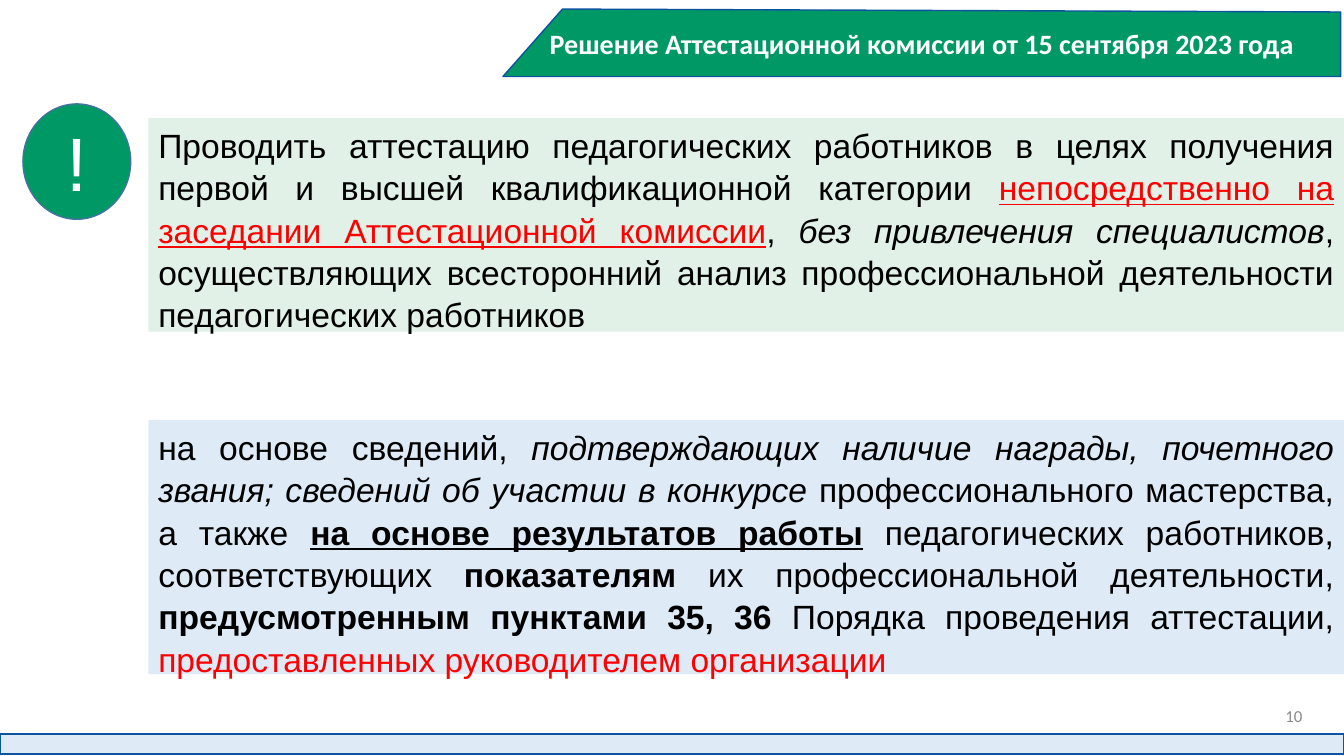
from dataclasses import dataclass

from pptx import Presentation
from pptx.dml.color import RGBColor
from pptx.enum.shapes import MSO_SHAPE
from pptx.enum.text import MSO_ANCHOR, MSO_AUTO_SIZE, PP_ALIGN
from pptx.shapes.autoshape import Shape
from pptx.slide import Slide
from pptx.text.text import TextFrame
from pptx.util import Pt

RECT, OVAL, BAR = MSO_SHAPE.RECTANGLE, MSO_SHAPE.OVAL, MSO_SHAPE.FLOWCHART_PROCESS
MIDDLE, TOP = MSO_ANCHOR.MIDDLE, MSO_ANCHOR.TOP
FIXED, GROW = MSO_AUTO_SIZE.NONE, MSO_AUTO_SIZE.SHAPE_TO_FIT_TEXT
CENTER, RIGHT, JUSTIFY = PP_ALIGN.CENTER, PP_ALIGN.RIGHT, PP_ALIGN.JUSTIFY

GREEN = RGBColor(0x00, 0x99, 0x65)
NAVY = RGBColor(0x0C, 0x54, 0x9E)
STEEL = RGBColor(0x43, 0x73, 0x9E)
MINT = RGBColor(0xE1, 0xF1, 0xE8)
PALE = RGBColor(0xDE, 0xEB, 0xF7)
GRAY = RGBColor(0x89, 0x89, 0x89)
RED = RGBColor(0xFF, 0x00, 0x00)
BLACK = RGBColor(0x00, 0x00, 0x00)
WHITE = RGBColor(0xFF, 0xFF, 0xFF)

WIDE, HIGH = 960, 540
LEFT = 106


@dataclass(frozen=True)
class Span:
    text: str
    color: RGBColor = BLACK
    bold: bool = False
    slant: bool = False
    under: bool = False


@dataclass(frozen=True)
class Panel:
    top: float
    height: float
    fill: RGBColor
    spans: tuple[Span, ...]


PANELS = (
    Panel(84.3, 152.6, MINT, (
        Span("Проводить аттестацию педагогических работников в целях получения "
             "первой и высшей квалификационной категории "),
        Span("непосредственно на заседании Аттестационной комиссии", RED, under=True),
        Span(", "),
        Span("без привлечения специалистов", slant=True),
        Span(", осуществляющих всесторонний анализ профессиональной деятельности "
             "педагогических работников"),
    )),
    Panel(300, 181.6, PALE, (
        Span("на основе сведений, "),
        Span("подтверждающих наличие награды, почетного звания; "
             "сведений об участии в конкурсе ", slant=True),
        Span("профессионального мастерства, а также "),
        Span("на основе результатов работы", bold=True, under=True),
        Span(" педагогических работников, соответствующих "),
        Span("показателям", bold=True),
        Span(" их профессиональной деятельности, "),
        Span("предусмотренным пунктами 35, 36 ", bold=True),
        Span("Порядка проведения аттестации, "),
        Span("предоставленных руководителем организации", RED),
    )),
)


def paint(shape: Shape, fill: RGBColor, line: RGBColor | None = None) -> None:
    shape.shadow.inherit = False
    shape.fill.solid()
    shape.fill.fore_color.rgb = fill
    if line is None:
        shape.line.fill.background()
    else:
        shape.line.color.rgb = line
        shape.line.width = Pt(1)


def write(frame: TextFrame, text: str, font: str, size: float, color: RGBColor,
          align: PP_ALIGN, bold: bool = False) -> None:
    frame.word_wrap = True
    frame.auto_size = FIXED
    frame.vertical_anchor = MIDDLE
    frame.text = text
    para = frame.paragraphs[0]
    para.alignment = align
    para.font.name = font
    para.font.size = Pt(size)
    para.font.bold = bold
    para.font.color.rgb = color


def draw_panel(slide: Slide, panel: Panel) -> None:
    box = slide.shapes.add_shape(RECT, Pt(LEFT), Pt(panel.top),
                                 Pt(WIDE - LEFT), Pt(panel.height))
    paint(box, panel.fill)
    frame = box.text_frame
    frame.word_wrap = True
    frame.auto_size = GROW
    frame.vertical_anchor = TOP
    para = frame.paragraphs[0]
    para.alignment = JUSTIFY
    para.line_spacing = 1.05
    para.font.name = "Arial"
    para.font.size = Pt(24)
    for span in panel.spans:
        run = para.add_run()
        run.text = span.text
        run.font.color.rgb = span.color
        run.font.bold = span.bold
        run.font.italic = span.slant
        run.font.underline = span.under


def draw_head(slide: Slide) -> None:
    left, top, right, base = 359.3, 6.5, 957.6, 54.7
    path = slide.shapes.build_freeform(Pt(401.8), Pt(top))
    path.add_line_segments([(Pt(right), Pt(8.6)), (Pt(right), Pt(base)),
                            (Pt(left), Pt(base))], close=True)
    paint(path.convert_to_shape(), GREEN, NAVY)

    title = slide.shapes.title
    title.left, title.top = Pt(left), Pt(top)
    title.width, title.height = Pt(right - left), Pt(base - top)
    write(title.text_frame, "Решение Аттестационной комиссии от 15 сентября 2023 года",
          "Calibri", 20, WHITE, CENTER, bold=True)
    slide.shapes.element.append(title.element)


def main() -> None:
    deck = Presentation()
    deck.slide_width, deck.slide_height = Pt(WIDE), Pt(HIGH)
    slide = deck.slides.add_slide(deck.slide_layouts[5])
    draw_head(slide)

    strip = slide.shapes.add_shape(BAR, Pt(0), Pt(524.2), Pt(WIDE), Pt(14.4))
    paint(strip, PALE, NAVY)

    number = slide.shapes.add_textbox(Pt(721.4), Pt(497), Pt(216), Pt(28.8))
    write(number.text_frame, "10", "Calibri", 12, GRAY, RIGHT)

    for panel in PANELS:
        draw_panel(slide, panel)

    badge = slide.shapes.add_shape(OVAL, Pt(16.4), Pt(74.2), Pt(77), Pt(82.4))
    paint(badge, GREEN, STEEL)
    write(badge.text_frame, "!", "Arial", 54, WHITE, CENTER)

    deck.save("out.pptx")


if __name__ == "__main__":
    main()
